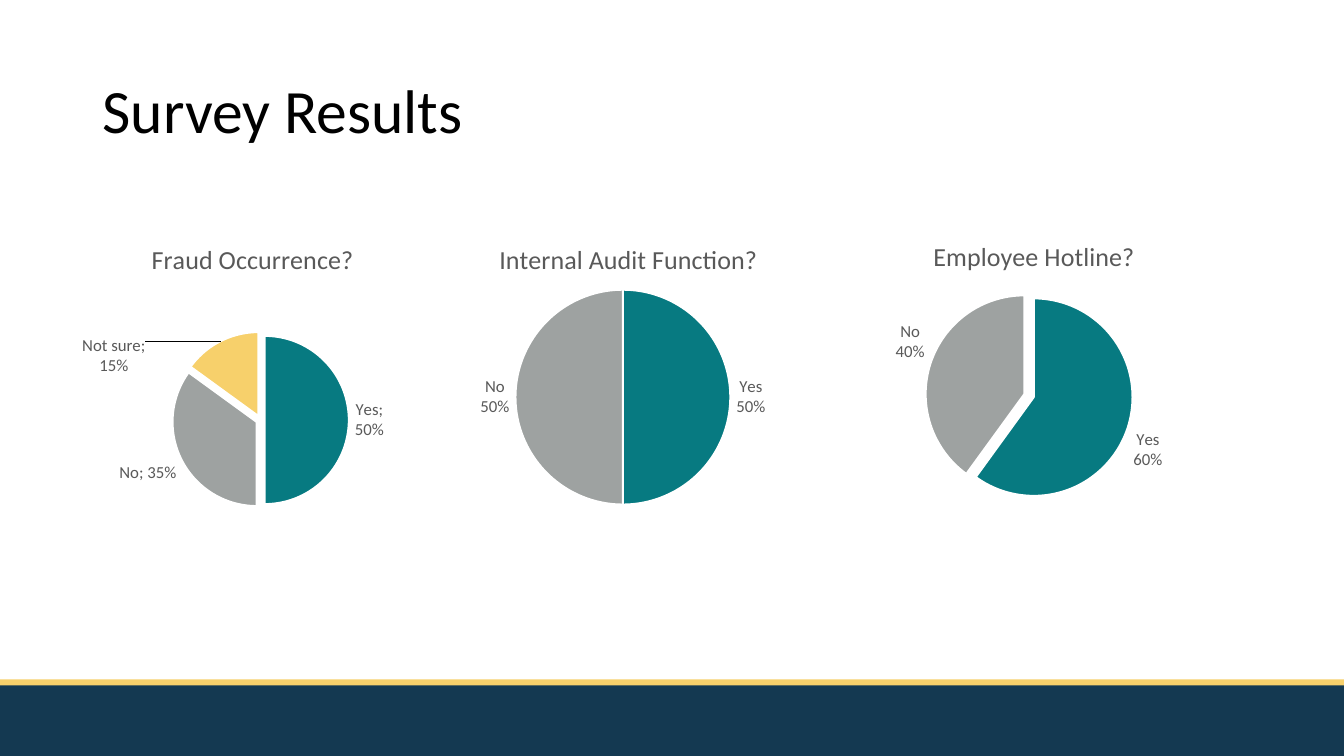
from dataclasses import dataclass
from typing import Optional

from pptx import Presentation
from pptx import oxml
from pptx.chart import data as chart_data
from pptx.dml.color import RGBColor
from pptx.enum import chart as chart_enum, shapes, text
from pptx.oxml import ns
from pptx.util import Pt

FONT = "Calibri"
GREY = "595959"
SLICE_COLOURS = ("077A81", "9EA2A1", "F7D06B")
CHART_TOP, CHART_HEIGHT = 154, 218


@dataclass
class Band:
    top: float
    height: float
    colour: str


@dataclass
class SliceLabel:
    index: int
    separator: str
    shift: Optional[tuple[float, float]] = None


@dataclass
class SurveyPie:
    title: str
    left: float
    width: float
    answers: dict[str, int]
    title_corner: tuple[float, float]
    plot_box: tuple[float, float, float, float]
    separator: str = "\n"
    explosion: int = 0
    special_labels: tuple[SliceLabel, ...] = ()


BANDS = (Band(485.3, 8.6, "F7D06B"), Band(489.6, 50.4, "143951"))

# Layout values are fractions of the chart frame
PIES = (
    SurveyPie("Fraud Occurrence?", 48.2, 257.8, {"Yes": 50, "No": 35, "Not sure": 15},
              (0.22, 0.07), (0.29, 0.38, 0.49, 0.58), ";\n", 5,
              (SliceLabel(1, "; "), SliceLabel(2, ";\n", (-0.2, 0.13)))),
    SurveyPie("Internal Audit Function?", 321.1, 247.7, {"Yes": 50, "No": 50},
              (0.13, 0.07), (0.19, 0.24, 0.62, 0.71)),
    SurveyPie("Employee Hotline?", 611.3, 247.7, {"Yes": 60, "No": 40},
              (0.21, 0.06), (0.2, 0.25, 0.6, 0.68), explosion=5),
)


def colour(value: str) -> RGBColor:
    return RGBColor.from_string(value)


def chart_xml(markup: str):
    """Parse one chart element, adding the namespace to its first tag."""
    return oxml.parse_xml(markup.replace(">", f" {ns.nsdecls('c')}>", 1))


def layout_xml(values: tuple[float, ...], inner: bool = False, offset: bool = False) -> str:
    target = '<c:layoutTarget val="inner"/>' if inner else ""
    modes = "" if offset else '<c:xMode val="edge"/><c:yMode val="edge"/>'
    sizes = "".join(f'<c:{name} val="{value}"/>' for name, value in zip("xywh", values))
    return f"<c:layout><c:manualLayout>{target}{modes}{sizes}</c:manualLayout></c:layout>"


def place(element, index: int, markup: str) -> None:
    for old in element.findall(ns.qn("c:layout")):
        element.remove(old)
    element.insert(index, chart_xml(markup))


def separator_xml(separator: str) -> str:
    return f"<c:separator>{separator}</c:separator>"


def slice_label_xml(label: SliceLabel) -> str:
    layout = layout_xml(label.shift, offset=True) if label.shift else ""
    flags = "".join(
        f'<c:{name} val="{int(name in ("showCatName", "showPercent"))}"/>'
        for name in ("showLegendKey", "showVal", "showCatName", "showSerName",
                     "showPercent", "showBubbleSize"))
    return (f'<c:dLbl><c:idx val="{label.index}"/>{layout}<c:dLblPos val="outEnd"/>'
            f"{flags}{separator_xml(label.separator)}</c:dLbl>")


def add_band(slide, band: Band, width: int) -> None:
    shape = slide.shapes.add_shape(
        shapes.MSO_SHAPE.RECTANGLE, 0, Pt(band.top), width, Pt(band.height))
    shape.shadow.inherit = False
    shape.fill.solid()
    shape.fill.fore_color.rgb = colour(band.colour)
    shape.line.fill.background()


def format_font(font, size: float, value: str) -> None:
    font.name = FONT
    font.size = Pt(size)
    font.bold = False
    font.color.rgb = colour(value)


def add_labels(series, pie: SurveyPie) -> None:
    labels = series.data_labels
    labels.show_value = False
    labels.show_category_name = True
    labels.show_percentage = True
    labels.number_format = "0%"
    labels.number_format_is_linked = False
    labels.position = chart_enum.XL_LABEL_POSITION.OUTSIDE_END
    format_font(labels.font, 12, GREY)
    element = series._element.find(ns.qn("c:dLbls"))
    element.find(ns.qn("c:showBubbleSize")).addnext(chart_xml(separator_xml(pie.separator)))
    for index, label in enumerate(pie.special_labels):
        element.insert(index, chart_xml(slice_label_xml(label)))


def add_pie(slide, pie: SurveyPie) -> None:
    survey = chart_data.CategoryChartData()
    survey.categories = list(pie.answers)
    survey.add_series(pie.title, list(pie.answers.values()))
    chart = slide.shapes.add_chart(
        chart_enum.XL_CHART_TYPE.PIE, Pt(pie.left), Pt(CHART_TOP),
        Pt(pie.width), Pt(CHART_HEIGHT), survey).chart
    format_font(chart.font, 12, GREY)
    chart.has_legend = False

    # Heading and plot position
    chart.has_title = True
    frame = chart.chart_title.text_frame
    frame.text = pie.title
    format_font(frame.paragraphs[0].font, 18.6, GREY)
    place(chart.chart_title._element, 1, layout_xml(pie.title_corner))
    plot_area = chart._chartSpace.chart.plotArea
    place(plot_area, 0, layout_xml(pie.plot_box, inner=True))

    # Slices
    plot = chart.plots[0]
    plot.vary_by_categories = True
    series = plot.series[0]
    if pie.explosion:
        series._element.find(ns.qn("c:tx")).addnext(
            chart_xml(f'<c:explosion val="{pie.explosion}"></c:explosion>'))
    for index, value in zip(range(len(pie.answers)), SLICE_COLOURS):
        slice_format = series.points[index].format
        slice_format.fill.solid()
        slice_format.fill.fore_color.rgb = colour(value)
        slice_format.line.color.rgb = colour("FFFFFF")
        slice_format.line.width = Pt(1.5)
    add_labels(series, pie)


def add_title(slide, words: str) -> None:
    title = slide.shapes.title
    title.left, title.top, title.width, title.height = Pt(66), Pt(28.8), Pt(828), Pt(104.4)
    frame = title.text_frame
    frame.text = words
    frame.vertical_anchor = text.MSO_ANCHOR.MIDDLE
    paragraph = frame.paragraphs[0]
    paragraph.alignment = text.PP_ALIGN.LEFT
    paragraph.line_spacing = 0.9
    format_font(paragraph.font, 44, "000000")


def main() -> None:
    presentation = Presentation()
    presentation.slide_width, presentation.slide_height = Pt(960), Pt(540)
    slide = presentation.slides.add_slide(presentation.slide_layouts[5])
    for band in BANDS:
        add_band(slide, band, presentation.slide_width)
    add_title(slide, "Survey Results")
    for pie in PIES:
        add_pie(slide, pie)
    presentation.save("out.pptx")


if __name__ == "__main__":
    main()
